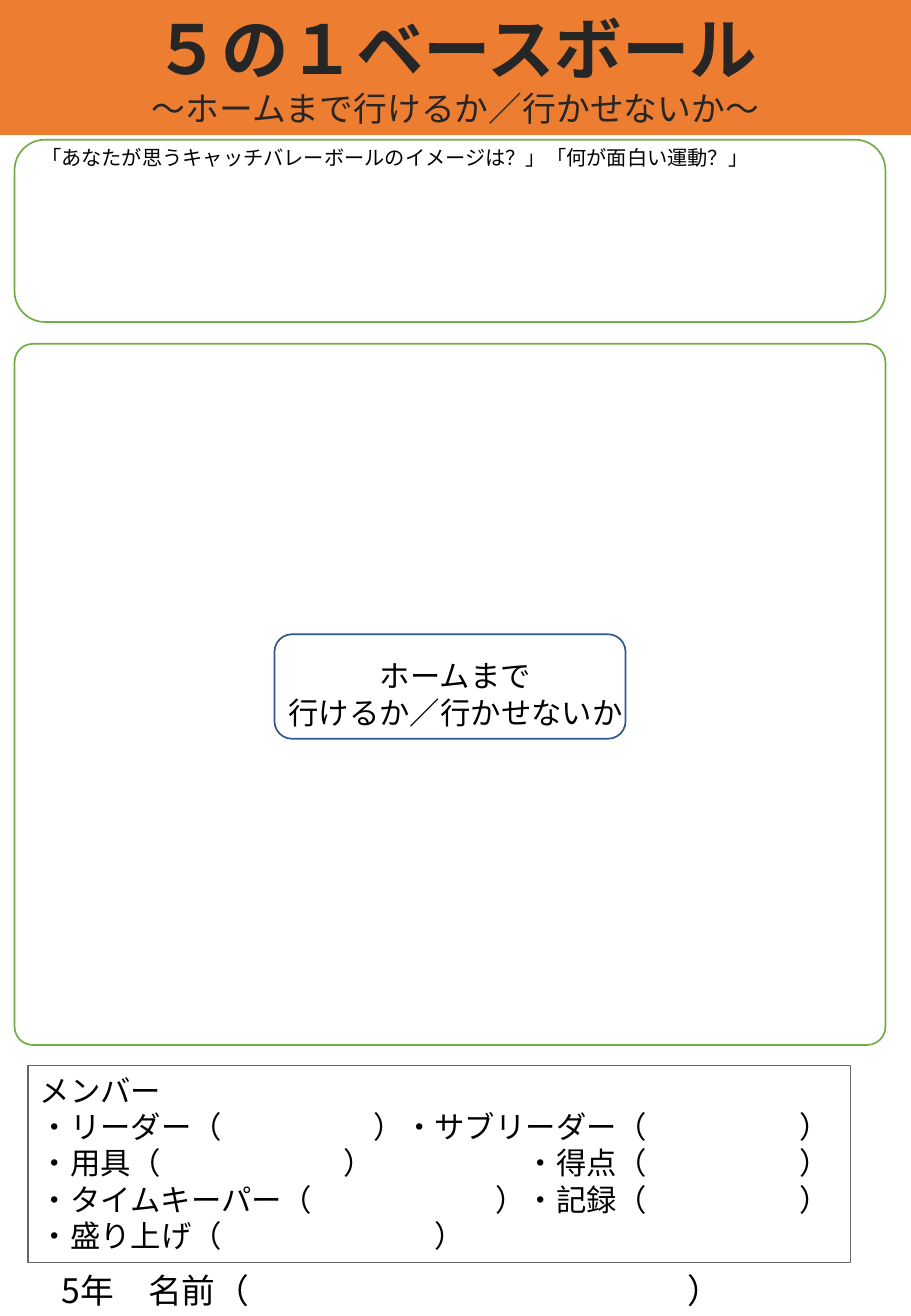
from dataclasses import dataclass

import pptx
import pptx.dml.color
import pptx.enum.shapes
import pptx.enum.text
import pptx.util
from lxml import etree
from pptx.oxml.ns import qn

Inches = pptx.util.Inches
Pt = pptx.util.Pt
RGBColor = pptx.dml.color.RGBColor
MSO_SHAPE = pptx.enum.shapes.MSO_SHAPE
PP_ALIGN = pptx.enum.text.PP_ALIGN
MSO_ANCHOR = pptx.enum.text.MSO_ANCHOR

ORANGE = RGBColor(0xED, 0x7D, 0x31)
GREEN = RGBColor(0x70, 0xAD, 0x47)
BLUE = RGBColor(0x32, 0x54, 0x91)
GRAY = RGBColor(0x66, 0x66, 0x66)
DARK = RGBColor(0x26, 0x26, 0x26)
BLACK = RGBColor(0, 0, 0)
JP_FONT = "Noto Sans CJK JP"
LATIN_FONT = "Calibri"
LEADING = 1.2


@dataclass
class Line:
    """One paragraph; tabs are counted in full-width characters."""
    text: str
    size: int
    tabs: tuple[float, ...] = ()
    bold: bool = False
    color: RGBColor = BLACK
    font: str = JP_FONT
    align: PP_ALIGN = PP_ALIGN.LEFT


@dataclass
class Frame:
    box: tuple[float, float, float, float]
    color: RGBColor
    width: float = 1
    corner: float | None = 0.1667


@dataclass
class TextArea:
    box: tuple[float, float, float, float]
    lines: list[Line]


def place(sp, box: tuple[float, float, float, float]) -> None:
    for name, value in zip(("left", "top", "width", "height"), box):
        setattr(sp, name, Inches(value))


def write(tf, lines: list[Line], anchor: MSO_ANCHOR) -> None:
    frame_format = {
        "word_wrap": True,
        "auto_size": pptx.enum.text.MSO_AUTO_SIZE.NONE,
        "vertical_anchor": anchor,
        "margin_left": Inches(0.1), "margin_right": Inches(0.1),
        "margin_top": Inches(0.05), "margin_bottom": Inches(0.05),
    }
    for name, value in frame_format.items():
        setattr(tf, name, value)
    for i, line in enumerate(lines):
        p = tf.add_paragraph() if i else tf.paragraphs[0]
        paragraph_format = {
            "alignment": line.align, "line_spacing": Pt(line.size * LEADING),
            "space_before": Pt(0), "space_after": Pt(0),
        }
        for name, value in paragraph_format.items():
            setattr(p, name, value)
        if line.tabs:
            tab_list = etree.SubElement(p._p.get_or_add_pPr(), qn("a:tabLst"))
            for tab in line.tabs:
                etree.SubElement(tab_list, qn("a:tab"),
                                 pos=str(int(Pt(tab * line.size))), algn="l")
        r = p.add_run()
        r.text = line.text
        font_format = {"size": Pt(line.size), "bold": line.bold,
                       "name": line.font}
        for name, value in font_format.items():
            setattr(r.font, name, value)
        r.font.color.rgb = line.color
        if line.font == JP_FONT:
            etree.SubElement(r._r.get_or_add_rPr(), qn("a:ea"),
                             typeface=JP_FONT)


def draw_frame(s, frame: Frame) -> None:
    kind = (MSO_SHAPE.RECTANGLE if frame.corner is None
            else MSO_SHAPE.ROUNDED_RECTANGLE)
    sp = s.shapes.add_shape(kind, *map(Inches, frame.box))
    if frame.corner is not None:
        sp.adjustments[0] = frame.corner
    sp.shadow.inherit = False
    sp.fill.background()
    sp.line.color.rgb = frame.color
    sp.line.width = Pt(frame.width)


def draw_text(s, area: TextArea) -> None:
    sp = s.shapes.add_textbox(*map(Inches, area.box))
    write(sp.text_frame, area.lines, MSO_ANCHOR.TOP)


MEMBER_BOX = (0.23, 8.77, 6.77, 1.62)

FRAMES = [
    Frame((0.12, 1.15, 7.17, 1.5), GREEN),
    Frame((0.12, 2.83, 7.17, 5.77), GREEN, corner=0.026),
    Frame((2.26, 5.22, 2.89, 0.86), BLUE),
    Frame(MEMBER_BOX, GRAY, 0.75, None),
]

TITLE = [
    Line("５の１ベースボール", 40, bold=True, color=DARK, align=PP_ALIGN.CENTER),
    Line("〜ホームまで行けるか／行かせないか〜", 20, color=DARK,
         align=PP_ALIGN.CENTER),
]

TEXTS = [
    TextArea((0.24, 1.15, 6.26, 0.3), [
        Line("「あなたが思うキャッチバレーボールのイメージは？」「何が面白い運動？」", 12),
    ]),
    TextArea((2.23, 5.36, 3.04, 0.71), [
        Line(text, 18, font=LATIN_FONT, align=PP_ALIGN.CENTER)
        for text in ("ホームまで", "行けるか／行かせないか")
    ]),
    TextArea(MEMBER_BOX, [
        Line("メンバー", 18),
        Line("・リーダー（\t）・サブリーダー（\t）", 18, (11, 25)),
        Line("・用具（\t）\t・得点（\t）", 18, (10, 16, 25)),
        Line("・タイムキーパー（\t）・記録（\t）", 18, (15, 25)),
        Line("・盛り上げ（\t）", 18, (13,)),
    ]),
    TextArea((0.41, 10.4, 6.02, 0.44), [
        Line("5年　名前（\t）", 20, (18.55,)),
    ]),
]


def main() -> None:
    prs = pptx.Presentation()
    prs.slide_width, prs.slide_height = Inches(7.5), Inches(10.83)
    s = prs.slides.add_slide(prs.slide_layouts[5])

    # Title band
    title = s.shapes.title
    place(title, (0, 0, 7.5, 1.11))
    title.fill.solid()
    title.fill.fore_color.rgb = ORANGE
    write(title.text_frame, TITLE, MSO_ANCHOR.MIDDLE)

    # Writing areas
    for frame in FRAMES:
        draw_frame(s, frame)

    # Prompts, theme, member roles and name line
    for area in TEXTS:
        draw_text(s, area)

    prs.save("out.pptx")


if __name__ == "__main__":
    main()
